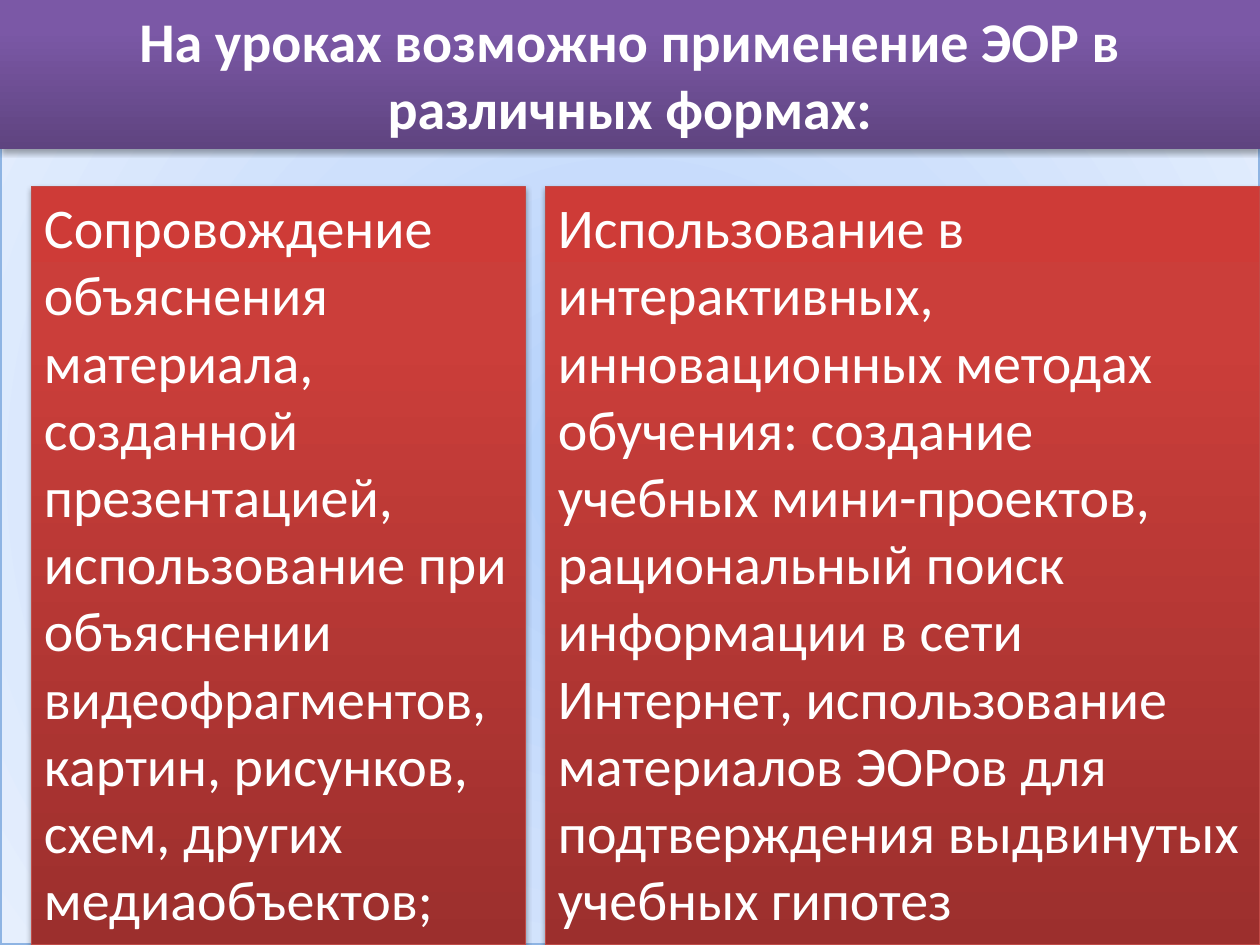
"""Build a slide on the ways of using digital learning resources in lessons."""
from lxml import etree
from pptx import Presentation
from pptx.dml.color import RGBColor
from pptx.enum.shapes import MSO_SHAPE
from pptx.enum.text import MSO_ANCHOR, MSO_AUTO_SIZE, PP_ALIGN
from pptx.oxml.ns import qn
from pptx.util import Inches, Pt

RECTANGLE = MSO_SHAPE.RECTANGLE
TOP = MSO_ANCHOR.TOP
GROW = MSO_AUTO_SIZE.SHAPE_TO_FIT_TEXT
CENTER, LEFT = PP_ALIGN.CENTER, PP_ALIGN.LEFT

TITLE = "На уроках возможно применение ЭОР в различных формах:"
FORMS = [
    (0.25, 3.92, "Сопровождение объяснения материала, созданной презентацией, "
     "использование при объяснении видеофрагментов, картин, рисунков, схем, "
     "других медиаобъектов;"),
    (4.33, 5.67, "Использование в интерактивных, инновационных методах обучения: "
     "создание учебных мини-проектов, рациональный поиск информации в сети "
     "Интернет, использование материалов ЭОРов для подтверждения выдвинутых "
     "учебных гипотез"),
]

WIDTH, HEIGHT = 10, 7.5
TITLE_HEIGHT = 1.18
FORMS_TOP = 1.48
FONT, FONT_SIZE = "Calibri", 32

WHITE = RGBColor(0xFF, 0xFF, 0xFF)
BLACK = RGBColor(0x00, 0x00, 0x00)
FRAME_BLUE = RGBColor(0x8E, 0xB4, 0xE3)
BORDER_RED = RGBColor(0xBF, 0x4C, 0x48)
BLUES = [(0, RGBColor(0xB0, 0xCF, 0xFB)), (50, RGBColor(0xCE, 0xE0, 0xFC)),
         (100, RGBColor(0xE6, 0xEF, 0xFD))]
PURPLES = [(0, RGBColor(0x5F, 0x44, 0x80)), (80, RGBColor(0x7B, 0x58, 0xA6)),
           (100, RGBColor(0x7C, 0x57, 0xA8))]
REDS = [(0, RGBColor(0x9C, 0x2F, 0x2D)), (80, RGBColor(0xCB, 0x3E, 0x3A)),
        (100, RGBColor(0xCE, 0x3B, 0x37))]


def add_element(parent, tag, **attributes):
    element = etree.SubElement(parent, qn(tag))
    for name, value in attributes.items():
        element.set(name, str(value))
    return element


def set_gradient(shape, stops, radial=False):
    shape.fill.gradient()
    gradient = shape.element.spPr.find(qn("a:gradFill"))
    for child in list(gradient):
        gradient.remove(child)
    stop_list = add_element(gradient, "a:gsLst")
    for position, color in stops:
        stop = add_element(stop_list, "a:gs", pos=position * 1000)
        add_element(stop, "a:srgbClr", val=color)
    if radial:
        circle = add_element(gradient, "a:path", path="circle")
        add_element(circle, "a:fillToRect", l=50000, t=50000, r=50000, b=50000)
    else:
        add_element(gradient, "a:lin", ang=270 * 60000, scaled=0)


def set_shadow(shape):
    shape.shadow.inherit = False
    effects = shape.element.spPr.find(qn("a:effectLst"))
    shadow = add_element(effects, "a:outerShdw", blurRad=Pt(3.1), dist=Pt(1.8),
                         dir=90 * 60000, rotWithShape=0)
    color = add_element(shadow, "a:srgbClr", val=BLACK)
    add_element(color, "a:alpha", val=35000)


def set_line(shape, color, width):
    shape.line.color.rgb = color
    shape.line.width = Pt(width)


def set_text(shape, text, alignment, bold=False):
    frame = shape.text_frame
    frame.text = text
    frame.word_wrap = True
    frame.auto_size = GROW
    frame.vertical_anchor = TOP
    paragraph = frame.paragraphs[0]
    paragraph.alignment = alignment
    font = paragraph.runs[0].font
    font.name, font.size, font.bold = FONT, Pt(FONT_SIZE), bold
    font.color.rgb = WHITE


def add_backdrop(slide):
    backdrop = slide.shapes.add_shape(RECTANGLE, 0, 0, Inches(WIDTH), Inches(HEIGHT))
    set_gradient(backdrop, BLUES, radial=True)
    set_line(backdrop, FRAME_BLUE, 2)
    backdrop.shadow.inherit = False
    slide.shapes.title.element.addprevious(backdrop.element)


def format_title(title):
    title.left, title.top = 0, 0
    title.width, title.height = Inches(WIDTH), Inches(TITLE_HEIGHT)
    set_gradient(title, PURPLES)
    set_shadow(title)
    set_text(title, TITLE, CENTER, bold=True)


def add_form(slide, left, width, text):
    panel = slide.shapes.add_shape(RECTANGLE, Inches(left), Inches(FORMS_TOP),
                                   Inches(width), Inches(HEIGHT - FORMS_TOP))
    set_gradient(panel, REDS)
    set_line(panel, BORDER_RED, 0.75)
    set_shadow(panel)
    set_text(panel, text, LEFT)


def main():
    presentation = Presentation()
    presentation.slide_width = Inches(WIDTH)
    presentation.slide_height = Inches(HEIGHT)
    slide = presentation.slides.add_slide(presentation.slide_layouts[5])
    add_backdrop(slide)
    format_title(slide.shapes.title)
    for left, width, text in FORMS:
        add_form(slide, left, width, text)
    presentation.save("out.pptx")


if __name__ == "__main__":
    main()
